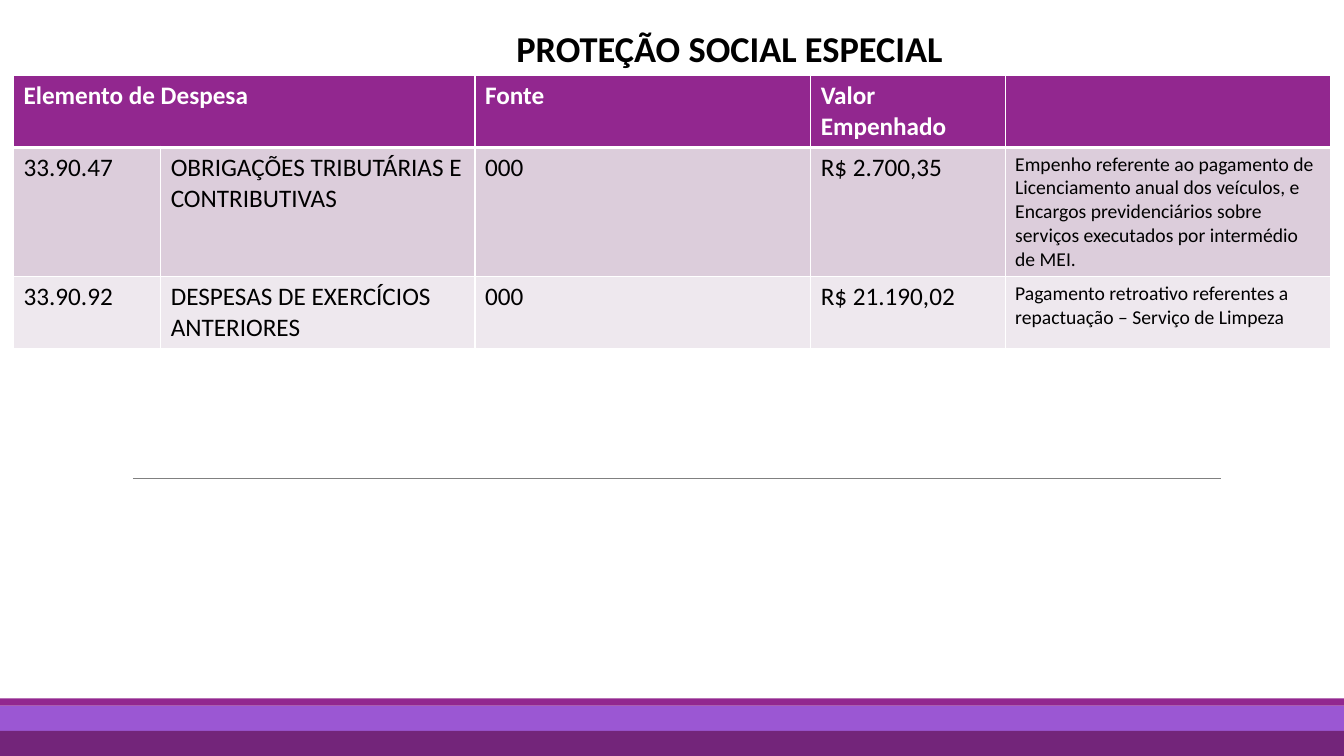
from dataclasses import dataclass

from lxml.etree import SubElement
from pptx import Presentation
from pptx.dml.color import RGBColor as Rgb
from pptx.enum.shapes import MSO_CONNECTOR as Link, MSO_SHAPE as Form
from pptx.enum.text import MSO_ANCHOR as Anchor, PP_ALIGN as Align
from pptx.oxml.ns import qn
from pptx.util import Cm, Pt


@dataclass(frozen=True)
class Theme:
    font: str = "Calibri"
    black: str = "000000"
    white: str = "FFFFFF"
    grey: str = "808080"
    purple: str = "92278F"
    violet: str = "9B57D3"
    plum: str = "6D1D6B"
    bands: tuple = ("DCCDDB", "EEE8EE")
    title: int = 26
    body: int = 18
    note: int = 14


THEME = Theme()
WIDTH, HEIGHT = 33.87, 19.05
COLS = (3.71, 7.92, 8.46, 4.9, 8.21)
ROWS = (1.77, 3.24, 1.77)
HEAD = ("Elemento de Despesa", "", "Fonte", "Valor Empenhado", "")
DATA = (
    ("33.90.47", "OBRIGAÇÕES TRIBUTÁRIAS E CONTRIBUTIVAS", "000", "R$ 2.700,35",
     "Empenho referente ao pagamento de Licenciamento anual dos veículos, e "
     "Encargos previdenciários sobre serviços executados por intermédio de MEI."),
    ("33.90.92", "DESPESAS DE EXERCÍCIOS ANTERIORES", "000", "R$ 21.190,02",
     "Pagamento retroativo referentes a repactuação – Serviço de Limpeza"),
)


def add_run(para, text, size, color, bold=False):
    run = para.add_run()
    run.text = text
    font = run.font
    font.name, font.size, font.bold = THEME.font, Pt(size), bold
    font.color.rgb = Rgb.from_string(color)


def add_band(slide, top, high, color, alpha=100):
    band = slide.shapes.add_shape(Form.RECTANGLE, 0, Cm(top), Cm(WIDTH), Cm(high))
    band.shadow.inherit = False
    band.fill.solid()
    band.fill.fore_color.rgb = Rgb.from_string(color)
    band.line.fill.background()
    if alpha < 100:
        tint = band.fill._xPr.find(qn("a:solidFill"))[0]
        SubElement(tint, qn("a:alpha"), val=str(alpha * 1000))


def add_rule(slide, left, right, top):
    rule = slide.shapes.add_connector(
        Link.STRAIGHT, Cm(left), Cm(top), Cm(right), Cm(top))
    rule.line.color.rgb = Rgb.from_string(THEME.grey)
    rule.line.width = Pt(0.5)
    SubElement(rule._element.spPr, qn("a:effectLst"))


def set_title(slide, text):
    title = slide.shapes.title
    title.left, title.top, title.width, title.height = (
        Cm(12.7), Cm(0.53), Cm(11.38), Cm(1.37))
    frame = title.text_frame
    frame.word_wrap = False
    frame.vertical_anchor = Anchor.MIDDLE
    para = frame.paragraphs[0]
    para.alignment = Align.CENTER
    add_run(para, text, THEME.title, THEME.black, True)


def set_edges(cell, top, bottom):
    props = cell._tc.get_or_add_tcPr()
    for side, width in (("L", 1), ("R", 1), ("T", top), ("B", bottom)):
        edge = SubElement(props, qn(f"a:ln{side}"), w=str(Pt(width)))
        fill = SubElement(edge, qn("a:solidFill"))
        SubElement(fill, qn("a:srgbClr"), val=THEME.white)


def set_cell(cell, text, size, color, fill, bold=False, top=1, bottom=1):
    set_edges(cell, top, bottom)
    cell.fill.solid()
    cell.fill.fore_color.rgb = Rgb.from_string(fill)
    if text:
        add_run(cell.text_frame.paragraphs[0], text, size, color, bold)


def add_grid(slide):
    grid = slide.shapes.add_table(
        len(ROWS), len(COLS), Cm(0.34), Cm(1.91), Cm(sum(COLS)), Cm(sum(ROWS))).table
    for col, wide in zip(grid.columns, COLS):
        col.width = Cm(wide)
    for row, high in zip(grid.rows, ROWS):
        row.height = Cm(high)
    # Heading row, with a thick edge below
    for c, text in enumerate(HEAD):
        set_cell(grid.cell(0, c), text, THEME.body, THEME.white, THEME.purple,
                 bold=True, bottom=3)
    grid.cell(0, 0).merge(grid.cell(0, 1))
    # Expense rows, with smaller notes in the last column
    for r, (texts, fill) in enumerate(zip(DATA, THEME.bands), 1):
        for c, text in enumerate(texts):
            size = THEME.note if c == len(COLS) - 1 else THEME.body
            set_cell(grid.cell(r, c), text, size, THEME.black, fill,
                     top=3 if r == 1 else 1)


def main():
    deck = Presentation()
    deck.slide_width, deck.slide_height = Cm(WIDTH), Cm(HEIGHT)
    slide = deck.slides.add_slide(deck.slide_layouts[5])
    # Footer bands and rule
    add_band(slide, 17.78, 1.27, THEME.violet)
    add_band(slide, 17.6, 0.18, THEME.purple)
    add_rule(slide, 3.35, 30.78, 12.06)
    add_band(slide, 18.42, 0.63, THEME.plum, alpha=85)
    # Title and expense table
    set_title(slide, "PROTEÇÃO SOCIAL ESPECIAL")
    add_grid(slide)
    deck.save("out.pptx")


if __name__ == "__main__":
    main()
